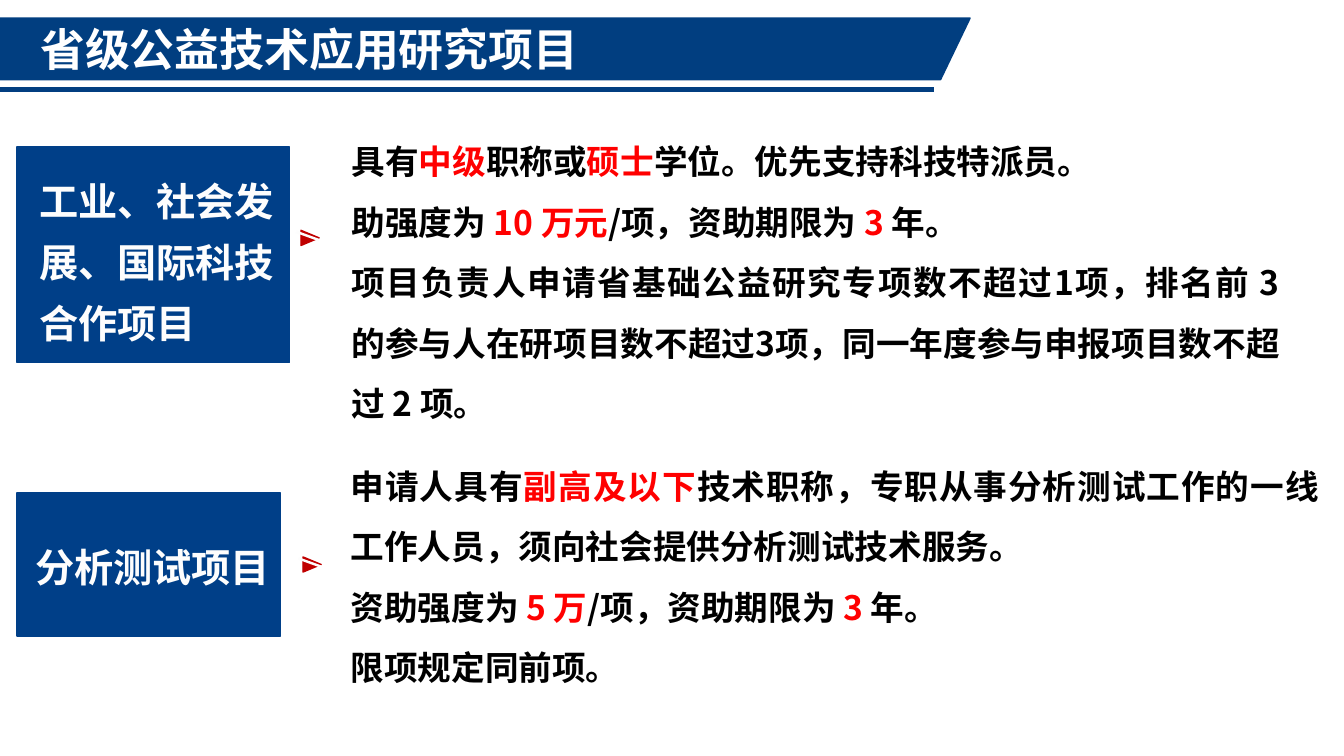
from lxml import etree
from pptx import Presentation
from pptx.dml.color import RGBColor
from pptx.enum.shapes import MSO_CONNECTOR, MSO_SHAPE
from pptx.enum.text import MSO_AUTO_SIZE, PP_ALIGN
from pptx.oxml.ns import qn
from pptx.util import Inches, Pt

PARALLELOGRAM = MSO_SHAPE.PARALLELOGRAM
RECTANGLE = MSO_SHAPE.RECTANGLE
TRIANGLE = MSO_SHAPE.ISOSCELES_TRIANGLE
STRAIGHT = MSO_CONNECTOR.STRAIGHT
FIT_SHAPE = MSO_AUTO_SIZE.SHAPE_TO_FIT_TEXT
LEFT, JUSTIFY = PP_ALIGN.LEFT, PP_ALIGN.JUSTIFY

FONT = "Noto Sans CJK SC"
NAVY = RGBColor(0x01, 0x3E, 0x80)
BLUE = RGBColor(0x00, 0x3F, 0x88)
WHITE = RGBColor(0xFF, 0xFF, 0xFF)
OFF_WHITE = RGBColor(0xFD, 0xFD, 0xFD)
BLACK = RGBColor(0x00, 0x00, 0x00)
RED = RGBColor(0xFF, 0x00, 0x00)
DARK_RED = RGBColor(0xC0, 0x00, 0x00)

prs = Presentation()
prs.slide_width = Inches(13.33)
prs.slide_height = Inches(7.5)
s = prs.slides.add_slide(prs.slide_layouts[6])
s.background.fill.solid()
s.background.fill.fore_color.rgb = WHITE


def add_figure(kind, box, color, width):
    sp = s.shapes.add_shape(kind, *[Inches(v) for v in box])
    sp.shadow.inherit = False
    sp.fill.solid()
    sp.fill.fore_color.rgb = color
    sp.line.color.rgb = color
    sp.line.width = Pt(width)
    return sp


def add_text(box, paragraphs, size, spacing, align=LEFT):
    tf = s.shapes.add_textbox(*[Inches(v) for v in box]).text_frame
    tf.word_wrap = True
    tf.auto_size = FIT_SHAPE
    for i, runs in enumerate(paragraphs):
        p = tf.add_paragraph() if i else tf.paragraphs[0]
        p.alignment = align
        p.line_spacing = spacing
        for text, color in runs:
            r = p.add_run()
            r.text = text
            r.font.size = Pt(size)
            r.font.bold = True
            r.font.name = FONT
            r.font.color.rgb = color
            ea = etree.SubElement(r.font._element, qn("a:ea"))
            ea.set("typeface", FONT)
    return tf


banner = add_figure(PARALLELOGRAM, (-0.29, 0.18, 9.91, 0.61), NAVY, 1.25)
banner.adjustments[0] = 0.48
title = add_text((0.33, 0.18, 9.16, 0.61),
                 [[("省级公益技术应用研究项目", WHITE)]], 32, 1.0)
title.margin_left = title.margin_right = Inches(0.07)
title.margin_top = title.margin_bottom = Inches(0.04)

industry_rules = [
    [("具有", BLACK), ("中级", RED), ("职称或", BLACK), ("硕士", RED),
     ("学位。优先支持科技特派员。", BLACK)],
    [("助强度为 ", BLACK), ("10 万元", RED), ("/项，资助期限为 ", BLACK),
     ("3 ", RED), ("年。", BLACK)],
    [("项目负责人申请省基础公益研究专项数不超过1项，排名前 3 的参与人在研"
      "项目数不超过3项，同一年度参与申报项目数不超过 2 项。", BLACK)],
]
testing_rules = [
    [("申请人具有", BLACK), ("副高及以下", RED),
     ("技术职称，专职从事分析测试工作的一线工作人员，"
      "须向社会提供分析测试技术服务。", BLACK)],
    [("资助强度为 ", BLACK), ("5 万", RED), ("/项，资助期限为 ", BLACK),
     ("3 ", RED), ("年。", BLACK)],
    [("限项规定同前项。", BLACK)],
]
add_text((3.39, 1.15, 9.4, 3.06), industry_rules, 24, 1.5, JUSTIFY)
add_text((3.38, 4.37, 9.8, 2.45), testing_rules, 24, 1.5, JUSTIFY)

categories = [
    ("工业、社会发展、国际科技合作项目",
     (0.17, 1.46, 2.7, 2.14), (0.29, 1.57, 2.86, 1.88)),
    ("分析测试项目",
     (0.17, 4.89, 2.61, 1.42), (0.25, 5.2, 2.64, 0.65)),
]
for name, panel, label in categories:
    add_figure(RECTANGLE, panel, BLUE, 1)
    add_text(label, [[(name, OFF_WHITE)]], 28, 1.3)

lines = [(0, 0.89, 9.26, 0.89, NAVY, 3.5)]
for x, y in [(3, 2.27), (3.02, 5.51)]:
    add_figure(TRIANGLE, (x, y, 0.15, 0.18), DARK_RED, 1).rotation = 90
    lines.append((x - 0.06, y + 0.03, x + 0.16, y + 0.11, OFF_WHITE, 1.75))

for x1, y1, x2, y2, color, width in lines:
    c = s.shapes.add_connector(STRAIGHT, Inches(x1), Inches(y1),
                               Inches(x2), Inches(y2))
    c.line.color.rgb = color
    c.line.width = Pt(width)
    etree.SubElement(c._element.spPr, qn("a:effectLst"))

prs.save("out.pptx")
